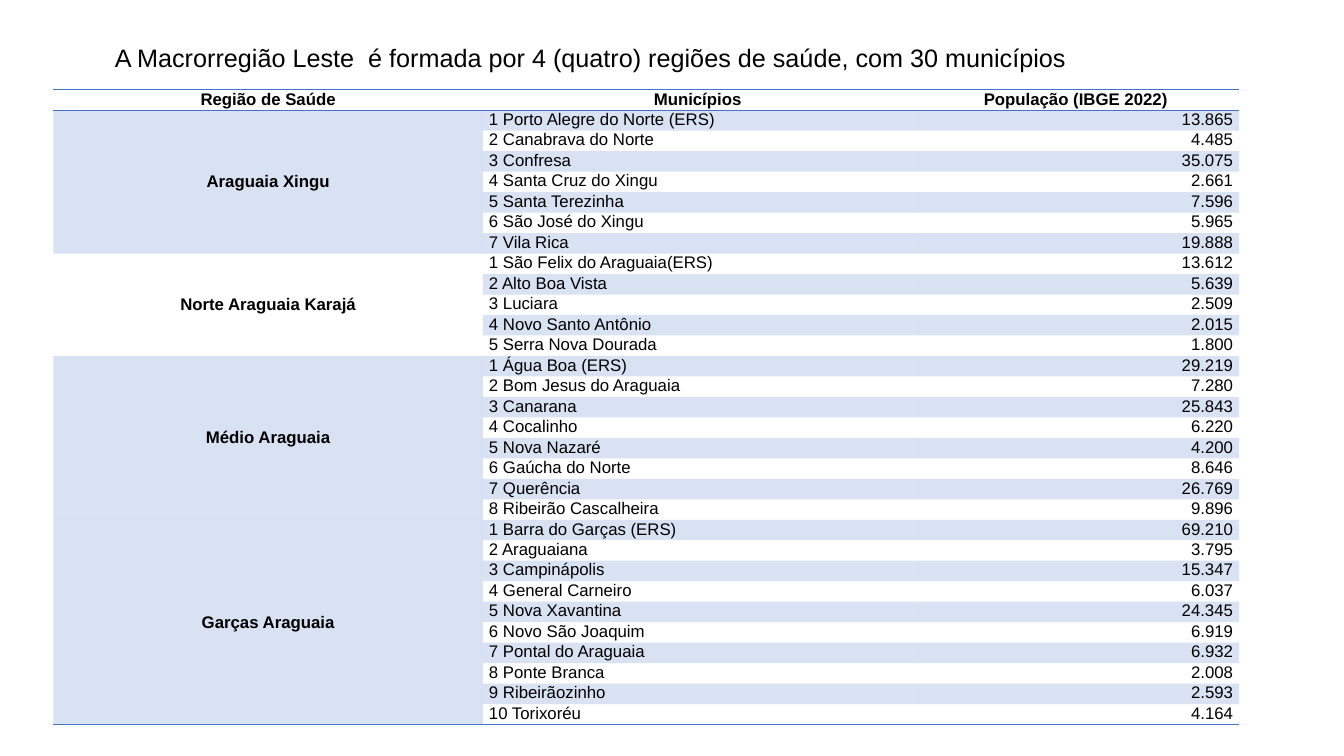
from typing import NamedTuple

from lxml import etree
from pptx import Presentation
from pptx.dml.color import RGBColor
from pptx.enum.text import MSO_ANCHOR, PP_ALIGN
from pptx.oxml import parse_xml
from pptx.oxml.ns import nsdecls, qn
from pptx.util import Inches, Pt

CENTER, JUSTIFY, RIGHT = PP_ALIGN.CENTER, PP_ALIGN.JUSTIFY, PP_ALIGN.RIGHT
TOP, MIDDLE = MSO_ANCHOR.TOP, MSO_ANCHOR.MIDDLE
BLACK = RGBColor(0x00, 0x00, 0x00)
BLUE = RGBColor(0x44, 0x72, 0xC4)
FONT = "Arial"
BAND_ALPHA = "20000"
NO_STYLE = "{2D5ABB26-0587-4C30-8999-92F81FD0307C}"

TITLE = "A Macrorregião Leste  é formada por 4 (quatro) regiões de saúde, com 30 municípios"
HEADERS = ("Região de Saúde", "Municípios", "População (IBGE 2022)")
COLUMN_WIDTHS = (4.26, 4.26, 3.24)
TABLE_HEIGHT = 6.3


class Town(NamedTuple):
    name: str
    population: str


class Region(NamedTuple):
    name: str
    shaded: bool
    towns: list[Town]


REGIONS = [
    Region("Araguaia Xingu", True, [
        Town("Porto Alegre do Norte (ERS)", "13.865"),
        Town("Canabrava do Norte", "4.485"),
        Town("Confresa", "35.075"),
        Town("Santa Cruz do Xingu", "2.661"),
        Town("Santa Terezinha", "7.596"),
        Town("São José do Xingu", "5.965"),
        Town("Vila Rica", "19.888"),
    ]),
    Region("Norte Araguaia Karajá", False, [
        Town("São Felix do Araguaia(ERS)", "13.612"),
        Town("Alto Boa Vista", "5.639"),
        Town("Luciara", "2.509"),
        Town("Novo Santo Antônio", "2.015"),
        Town("Serra Nova Dourada", "1.800"),
    ]),
    Region("Médio Araguaia", True, [
        Town("Água Boa (ERS)", "29.219"),
        Town("Bom Jesus do Araguaia", "7.280"),
        Town("Canarana", "25.843"),
        Town("Cocalinho", "6.220"),
        Town("Nova Nazaré", "4.200"),
        Town("Gaúcha do Norte", "8.646"),
        Town("Querência", "26.769"),
        Town("Ribeirão Cascalheira", "9.896"),
    ]),
    Region("Garças Araguaia", True, [
        Town("Barra do Garças (ERS)", "69.210"),
        Town("Araguaiana", "3.795"),
        Town("Campinápolis", "15.347"),
        Town("General Carneiro", "6.037"),
        Town("Nova Xavantina", "24.345"),
        Town("Novo São Joaquim", "6.919"),
        Town("Pontal do Araguaia", "6.932"),
        Town("Ponte Branca", "2.008"),
        Town("Ribeirãozinho", "2.593"),
        Town("Torixoréu", "4.164"),
    ]),
]


def set_font(p, size: float, bold: bool = False) -> None:
    p.font.name, p.font.size, p.font.bold = FONT, Pt(size), bold
    p.font.color.rgb = BLACK


def fill_cell(cell, text: str, align, shaded: bool = False, heading: bool = False) -> None:
    """Write the cell's text and give it a pale blue band or no fill."""
    cell.margin_left = cell.margin_right = Inches(0.06)
    cell.margin_top = cell.margin_bottom = 0
    cell.vertical_anchor = MIDDLE if heading else TOP
    p = cell.text_frame.paragraphs[0]
    p.text, p.alignment = text, align
    set_font(p, 12, heading)
    if shaded:
        cell.fill.solid()
        cell.fill.fore_color.rgb = BLUE
        color = cell._tc.tcPr.find(".//" + qn("a:srgbClr"))
        etree.SubElement(color, qn("a:alpha"), val=BAND_ALPHA)
    else:
        cell.fill.background()


def add_border(cell, tag: str) -> None:
    """Add a 1 pt border; add lnB before lnT to keep the schema order."""
    line = parse_xml(
        f'<a:{tag} {nsdecls("a")} w="12700"><a:solidFill>'
        f'<a:srgbClr val="{BLUE}"/></a:solidFill></a:{tag}>')
    cell._tc.get_or_add_tcPr().insert(0, line)


def add_title(s) -> None:
    tf = s.shapes.add_textbox(Inches(1.04), Inches(0.4), Inches(9.94), Inches(6.88)).text_frame
    tf.word_wrap = True
    p = tf.paragraphs[0]
    p.text, p.alignment = TITLE, JUSTIFY
    p.line_spacing, p.space_before = 0.9, Pt(10)
    set_font(p, 18)


def add_population_table(s) -> None:
    n_rows = 1 + sum(len(region.towns) for region in REGIONS)
    frame = s.shapes.add_table(n_rows, len(HEADERS), Inches(0.53), Inches(0.89),
                               Inches(sum(COLUMN_WIDTHS)), Inches(TABLE_HEIGHT))
    table = frame.table
    table._tbl.tblPr.find(qn("a:tableStyleId")).text = NO_STYLE
    for column, width in zip(table.columns, COLUMN_WIDTHS):
        column.width = Inches(width)
    for row in table.rows:
        row.height = Inches(TABLE_HEIGHT / n_rows)

    for col, header in enumerate(HEADERS):
        cell = table.cell(0, col)
        fill_cell(cell, header, CENTER, heading=True)
        add_border(cell, "lnB")
        add_border(cell, "lnT")

    row = 1
    for region in REGIONS:
        region_cell = table.cell(row, 0)
        region_cell.merge(table.cell(row + len(region.towns) - 1, 0))
        fill_cell(region_cell, region.name, CENTER, region.shaded, heading=True)
        for number, town in enumerate(region.towns, 1):
            shaded = row % 2 == 1
            fill_cell(table.cell(row, 1), f"{number} {town.name}", JUSTIFY, shaded)
            fill_cell(table.cell(row, 2), town.population, RIGHT, shaded)
            row += 1

    last = n_rows - 1
    for cell in (region_cell, *(table.cell(last, col) for col in range(len(HEADERS)))):
        add_border(cell, "lnB")


def main() -> None:
    prs = Presentation()
    prs.slide_width, prs.slide_height = Inches(13.33), Inches(7.5)
    s = prs.slides.add_slide(prs.slide_layouts[6])
    add_title(s)
    add_population_table(s)
    prs.save("out.pptx")


if __name__ == "__main__":
    main()
